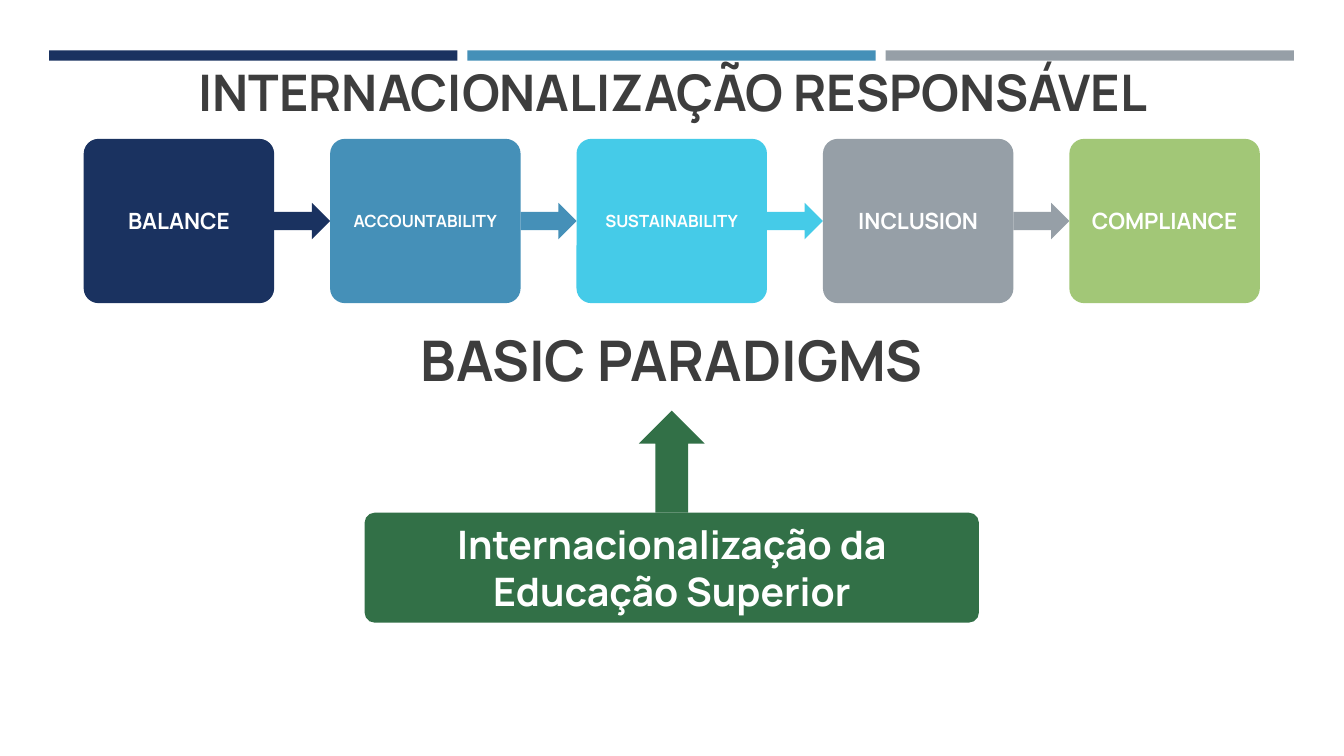
from pptx import Presentation
from pptx.dml.color import RGBColor
from pptx.enum.shapes import MSO_SHAPE as Shape
from pptx.enum.text import MSO_ANCHOR as Anchor, MSO_AUTO_SIZE as AutoSize, PP_ALIGN as Align
from pptx.util import Cm, Pt

COLORS = {
    "navy": "1A3260",
    "blue": "4590B8",
    "cyan": "45CBE8",
    "gray": "969FA7",
    "lime": "A2C777",
    "green": "327047",
    "text": "3D3D3D",
    "white": "FFFFFF",
}
FONT = "Manrope"
PARADIGMS = [
    ("BALANCE", "navy", 16),
    ("ACCOUNTABILITY", "blue", 12),
    ("SUSTAINABILITY", "cyan", 12),
    ("INCLUSION", "gray", 16),
    ("COMPLIANCE", "lime", 16),
]
CARD_LEFT, CARD_TOP, CARD_WIDTH, CARD_HEIGHT = 2.11, 3.5, 4.8, 4.14
CARD_STEP = 6.21
ARROW_HEIGHT = 0.92
BAR_LEFT, BAR_STEP, BAR_WIDTH = 1.24, 10.54, 10.29


def color(name):
    """Return the palette colour of that name."""
    return RGBColor.from_string(COLORS[name])


def write_text(shape, lines, size, color_name, wrap=True):
    """Fill a shape with centred bold lines, one paragraph each."""
    frame = shape.text_frame
    frame.text = "\n".join(lines)
    frame.word_wrap = wrap
    frame.auto_size = AutoSize.NONE
    frame.vertical_anchor = Anchor.MIDDLE
    for paragraph in frame.paragraphs:
        paragraph.alignment = Align.CENTER
        paragraph.font.name = FONT
        paragraph.font.size = Pt(size)
        paragraph.font.bold = True
        paragraph.font.color.rgb = color(color_name)


def add_block(slide, kind, left, top, width, height, color_name):
    """Add a plain filled shape."""
    shape = slide.shapes.add_shape(kind, Cm(left), Cm(top), Cm(width), Cm(height))
    shape.shadow.inherit = False
    shape.fill.solid()
    shape.fill.fore_color.rgb = color(color_name)
    shape.line.fill.background()
    return shape


def add_card(slide, left, top, width, height, color_name, lines, size):
    """Add a rounded card with white text."""
    card = add_block(slide, Shape.ROUNDED_RECTANGLE, left, top, width, height, color_name)
    card.adjustments[0] = 0.09
    write_text(card, lines, size, "white")


def add_title(slide, text):
    """Place and format the title placeholder."""
    title = slide.shapes.title
    title.left, title.top, title.width, title.height = Cm(4.55), Cm(1.4), Cm(24.82), Cm(1.8)
    write_text(title, [text], 36, "text", wrap=False)


def add_bars(slide):
    """Add the three coloured bars along the top."""
    for index, name in enumerate(("navy", "blue", "gray")):
        add_block(slide, Shape.RECTANGLE, BAR_LEFT + index * BAR_STEP, 1.27, BAR_WIDTH, 0.26, name)


def add_paradigms(slide):
    """Add the row of cards with an arrow between neighbours."""
    arrow_top = CARD_TOP + (CARD_HEIGHT - ARROW_HEIGHT) / 2
    for index, (label, name, size) in enumerate(PARADIGMS):
        left = CARD_LEFT + index * CARD_STEP
        add_card(slide, left, CARD_TOP, CARD_WIDTH, CARD_HEIGHT, name, [label], size)
        if index < len(PARADIGMS) - 1:
            add_block(slide, Shape.RIGHT_ARROW, left + CARD_WIDTH, arrow_top,
                      CARD_STEP - CARD_WIDTH, ARROW_HEIGHT, name)


def add_heading(slide, text):
    """Add the heading below the row of cards."""
    box = slide.shapes.add_textbox(Cm(10.21), Cm(8.08), Cm(13.44), Cm(1.96))
    write_text(box, [text], 40, "text", wrap=False)


def main():
    """Build and save the slide."""
    presentation = Presentation()
    presentation.slide_width, presentation.slide_height = Cm(33.87), Cm(19.05)
    slide = presentation.slides.add_slide(presentation.slide_layouts[5])
    add_title(slide, "INTERNACIONALIZAÇÃO RESPONSÁVEL")
    add_bars(slide)
    add_paradigms(slide)
    add_heading(slide, "BASIC PARADIGMS")
    add_block(slide, Shape.UP_ARROW, 16.1, 10.35, 1.66, 2.57, "green")
    add_card(slide, 9.19, 12.92, 15.48, 2.77, "green",
             ["Internacionalização da", "Educação Superior"], 28)
    presentation.save("out.pptx")


if __name__ == "__main__":
    main()
